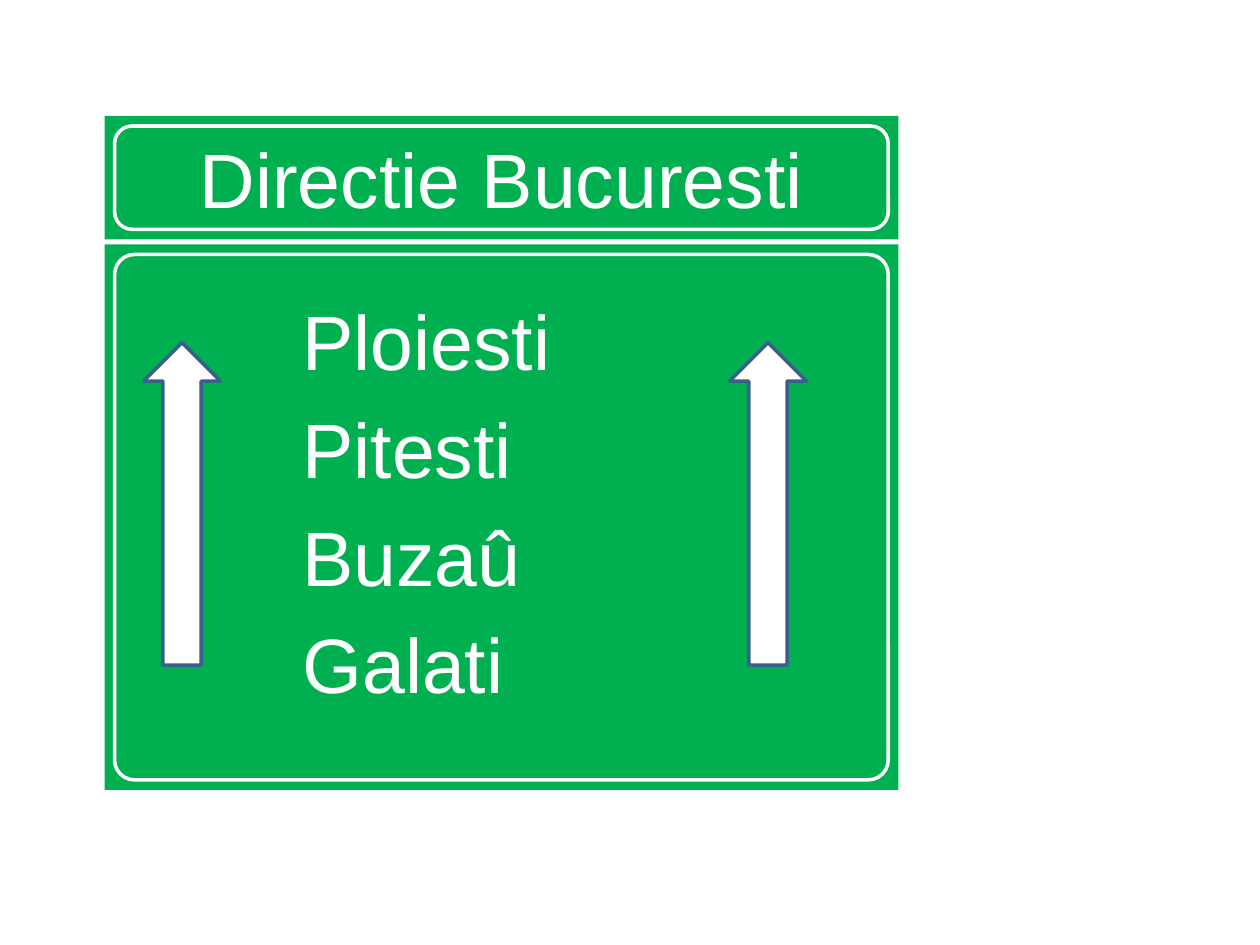
import pptx
import pptx.util
import pptx.dml.color
import pptx.enum.shapes
import pptx.enum.text
import pptx.oxml
from pptx.util import Inches

COLOURS = {"green": "00B050", "white": "FFFFFF", "arrow_edge": "3A5F8C"}
SHAPES = pptx.enum.shapes.MSO_SHAPE
FRAME_INSET = 0.08
CITIES = ["Ploiesti", "Pitesti", "Buzaû", "Galati"]


def colour(name):
    return pptx.dml.color.RGBColor.from_string(COLOURS[name])


def place(shape, box):
    shape.left, shape.top, shape.width, shape.height = map(Inches, box)


def add_outlined(page, kind, box, line, fill=None):
    shape = page.shapes.add_shape(kind, *map(Inches, box))
    shape.shadow.inherit = False
    if fill:
        shape.fill.solid()
        shape.fill.fore_color.rgb = colour(fill)
    else:
        shape.fill.background()
    shape.line.color.rgb = colour(line)
    shape.line.width = pptx.util.Pt(2)
    return shape


def fill_panel(panel, box, lines):
    """Turn a placeholder into a green sign panel with white lettering."""
    place(panel, box)
    panel.fill.solid()
    panel.fill.fore_color.rgb = colour("green")
    frame = panel.text_frame
    frame.text = "\n".join(lines)
    frame.auto_size = pptx.enum.text.MSO_AUTO_SIZE.NONE
    frame.word_wrap = True
    for para in frame.paragraphs:
        para.font.size = pptx.util.Pt(44)
        para.font.name = "Arial"
        para.font.color.rgb = colour("white")
    return frame


def add_frame(page, box, corner):
    """White rounded border just inside a panel."""
    left, top, width, height = box
    inner = (left + FRAME_INSET, top + FRAME_INSET,
             width - 2 * FRAME_INSET, height - 2 * FRAME_INSET)
    border = add_outlined(page, SHAPES.ROUNDED_RECTANGLE, inner, "white")
    border.adjustments[0] = corner


def build_heading(page, box):
    fill_panel(page.shapes.title, box, ["Directie Bucuresti"])
    add_frame(page, box, 0.17)


def build_destinations(page, box):
    left, top, width, height = box
    frame = fill_panel(page.placeholders[1], box, CITIES)
    frame.margin_left = Inches(1.57)
    frame.margin_top = Inches(0.39)
    # Plain list: no bullet and no hanging indent
    for para in frame.paragraphs:
        properties = para._p.get_or_add_pPr()
        properties.set("marL", "0")
        properties.set("indent", "0")
        properties.insert_element_before(
            pptx.oxml.parse_xml(
                '<a:buNone xmlns:a="http://schemas.openxmlformats.org/drawingml/2006/main"/>'),
            "a:tabLst", "a:defRPr", "a:extLst")
    # Straight-ahead arrows on both sides of the list
    for offset in (0.31, 4.96):
        add_outlined(page, SHAPES.UP_ARROW, (left + offset, top + 0.78, 0.61, 2.56),
                     "arrow_edge", "white")
    add_frame(page, box, 0.038)


def main():
    deck = pptx.Presentation()
    deck.slide_width, deck.slide_height = Inches(10), Inches(7.5)
    page = deck.slides.add_slide(deck.slide_layouts[1])
    build_heading(page, (0.83, 0.92, 6.3, 0.98))
    build_destinations(page, (0.83, 1.94, 6.3, 4.33))
    deck.save("out.pptx")


if __name__ == "__main__":
    main()
